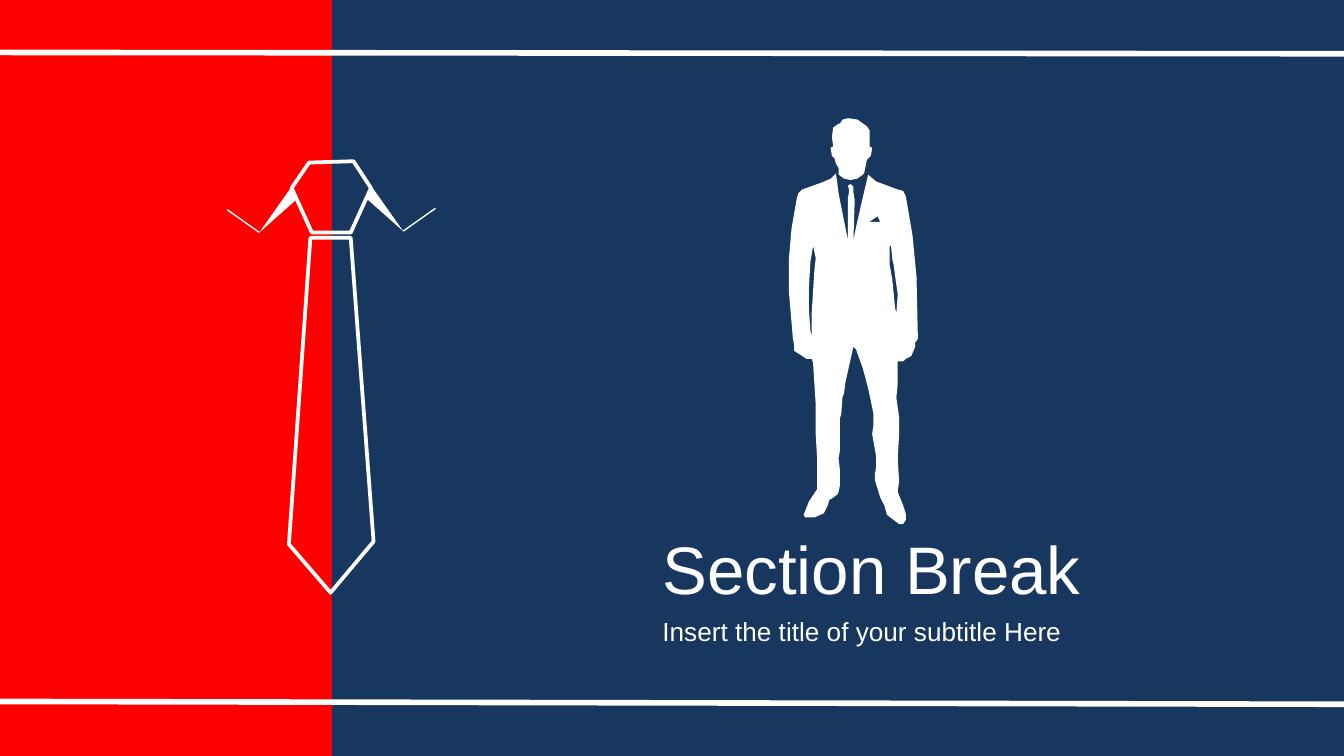
import pptx
import pptx.dml.color
import pptx.enum.shapes
import pptx.enum.text
import pptx.oxml
import pptx.oxml.ns
import pptx.util

Pt = pptx.util.Pt
WHITE = pptx.dml.color.RGBColor(0xFF, 0xFF, 0xFF)
RED = pptx.dml.color.RGBColor(0xFF, 0x00, 0x00)
NAVY = pptx.dml.color.RGBColor(0x17, 0x37, 0x5E)
FONT = "Arial"

WIDTH, HEIGHT = 720, 405
RED_WIDTH = 177.8
UNIT = Pt(0.72)  # size of one drawing unit in the outlines below

# text, top, height, size
TEXTS = [
    ("Section Break", 281.5, 45.4, 36),
    ("Insert the title of your subtitle Here", 326.9, 22.3, 14),
]
TEXT_LEFT, TEXT_WIDTH = 347.8, 427.7

# start and end height of the full-width rules
RULES = [(28.1, 28.8), (375.8, 377.3)]

KNOT = [(217, 140), (230, 121), (263, 120), (276, 140), (261, 173), (232, 173)]
BLADE = [(215, 405), (246, 441), (278, 403), (261, 177), (231, 177)]
COLLAR = [(193, 173), (217, 139), (220, 149)]
COLLAR_EDGE = [(169, 156), (193, 173)]
MIRROR_SUM = 493  # x of a left point plus x of its right twin

SUIT = [
    (635, 258), (633, 267), (629, 285), (628, 293), (627, 295), (626, 308),
    (625, 311), (625, 335), (624, 341), (625, 350), (625, 361), (624, 366),
    (623, 368), (619, 371), (617, 372), (616, 376), (613, 382), (606, 385),
    (599, 385), (598, 383), (602, 373), (608, 364), (608, 358), (608, 352),
    (608, 341), (607, 323), (607, 305), (607, 301), (605, 270), (604, 267),
    (600, 267), (591, 261), (591, 257), (590, 252), (589, 240), (587, 217),
    (587, 193), (589, 170), (593, 147), (594, 144), (597, 141), (611, 136),
    (618, 133), (622, 129), (623, 136), (624, 144), (626, 154), (631, 179),
    (631, 147), (632, 142), (631, 138), (633, 137), (635, 139), (635, 143),
    (636, 149), (635, 179), (637, 169), (642, 147), (646, 130), (652, 135),
    (668, 141), (672, 142), (674, 146), (679, 175), (682, 206), (683, 252),
    (681, 255), (681, 258), (678, 265), (674, 267), (672, 269), (668, 269),
    (668, 285), (667, 296), (669, 310), (669, 324), (668, 341), (669, 358),
    (668, 366), (672, 376), (674, 382), (674, 387), (672, 390), (669, 390),
    (660, 383), (658, 376), (655, 370), (654, 367), (651, 357), (651, 353),
    (652, 347), (652, 340), (649, 323), (650, 316), (650, 308), (646, 289),
    (642, 274), (637, 260),
]
LEFT_ARM_GAP = [
    (605, 183), (603, 195), (602, 213), (602, 231), (603, 246), (604, 251),
    (604, 233), (606, 201), (607, 192),
]
RIGHT_ARM_GAP = [
    (667, 233), (668, 219), (666, 205), (665, 197), (664, 193), (663, 183),
    (662, 183), (662, 189), (662, 197), (664, 208), (666, 229),
]
POCKET = [(655, 165), (653, 161), (647, 165)]
HEAD = [
    (620, 109), (619, 102), (620, 95), (624, 92), (625, 92), (627, 89),
    (631, 88), (638, 89), (645, 94), (647, 97), (647, 101), (647, 109),
    (649, 110), (648, 116), (645, 119), (644, 124), (643, 129), (642, 130),
    (638, 133), (633, 134), (628, 133), (624, 130), (624, 125), (622, 122),
    (621, 118), (619, 116), (618, 110),
]


def add_text(slide, text, left, top, width, height, size, color=WHITE):
    box = slide.shapes.add_textbox(Pt(left), Pt(top), Pt(width), Pt(height))
    tf = box.text_frame
    tf.word_wrap = True
    tf.vertical_anchor = pptx.enum.text.MSO_ANCHOR.MIDDLE
    r = tf.paragraphs[0].add_run()
    r.text = text
    r.font.name, r.font.size, r.font.color.rgb = FONT, Pt(size), color


def add_panel(slide, left, width, color):
    sp = slide.shapes.add_shape(pptx.enum.shapes.MSO_SHAPE.RECTANGLE,
                                Pt(left), 0, Pt(width), Pt(HEIGHT))
    sp.shadow.inherit = False
    sp.fill.solid()
    sp.fill.fore_color.rgb = color
    sp.line.fill.background()


def add_line(slide, start, end, weight):
    """Draw a white line between two (x, y) points given as lengths."""
    line = slide.shapes.add_connector(
        pptx.enum.shapes.MSO_CONNECTOR.STRAIGHT, *start, *end)
    line.line.color.rgb = WHITE
    line.line.width = Pt(weight)
    effects = pptx.oxml.parse_xml(
        "<a:effectLst %s/>" % pptx.oxml.ns.nsdecls("a"))
    line._element.spPr.append(effects)


def add_outline(slide, *contours, weight=None):
    """Draw closed contours: a white line if weight is given, else a white fill."""
    builder = slide.shapes.build_freeform(*contours[0][0], scale=UNIT)
    builder.add_line_segments(contours[0][1:], close=True)
    for hole in contours[1:]:
        builder.move_to(*hole[0])
        builder.add_line_segments(hole[1:], close=True)
    sp = builder.convert_to_shape()
    sp.shadow.inherit = False
    if weight:
        sp.fill.background()
        sp.line.color.rgb = WHITE
        sp.line.width = Pt(weight)
    else:
        sp.fill.solid()
        sp.fill.fore_color.rgb = WHITE
        sp.line.fill.background()


def mirrored(points):
    return [(MIRROR_SUM - x, y - 1) for x, y in points]


def main():
    prs = pptx.Presentation()
    prs.slide_width, prs.slide_height = Pt(WIDTH), Pt(HEIGHT)
    slide = prs.slides.add_slide(prs.slide_layouts[6])
    slide.background.fill.solid()
    slide.background.fill.fore_color.rgb = NAVY

    add_panel(slide, 0, RED_WIDTH, RED)
    add_panel(slide, RED_WIDTH, WIDTH - RED_WIDTH, NAVY)

    for part in (KNOT, BLADE):
        add_outline(slide, part, weight=2)
    for collar, edge in ((COLLAR, COLLAR_EDGE),
                         (mirrored(COLLAR), mirrored(COLLAR_EDGE))):
        add_outline(slide, collar)
        start, end = [(x * UNIT, y * UNIT) for x, y in edge]
        add_line(slide, start, end, 0.75)

    for text, top, height, size in TEXTS:
        add_text(slide, text, TEXT_LEFT, top, TEXT_WIDTH, height, size)
    for y1, y2 in RULES:
        add_line(slide, (0, Pt(y1)), (Pt(WIDTH), Pt(y2)), 3)

    add_outline(slide, SUIT, LEFT_ARM_GAP, RIGHT_ARM_GAP, POCKET)
    add_outline(slide, HEAD)
    prs.save("out.pptx")


if __name__ == "__main__":
    main()
